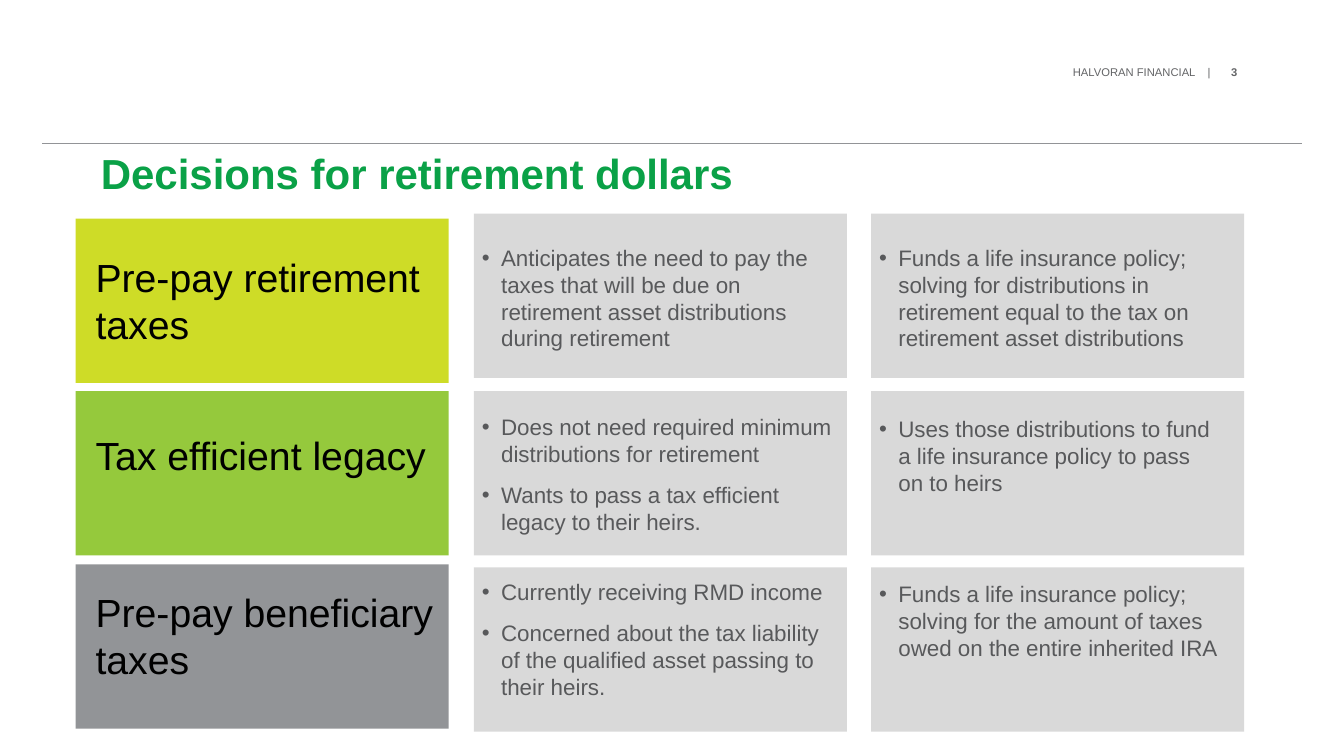
from dataclasses import dataclass

from lxml.etree import SubElement
from pptx import Presentation
from pptx.dml.color import RGBColor
from pptx.enum.shapes import MSO_CONNECTOR, MSO_SHAPE
from pptx.enum.text import MSO_ANCHOR, MSO_AUTO_SIZE, PP_ALIGN
from pptx.oxml.ns import qn
from pptx.slide import Slide
from pptx.text.text import TextFrame, _Paragraph
from pptx.util import Inches, Pt

FONT = "Arial"
TILE_WIDTH, TILE_HEIGHT = 3.7, 1.63
LABEL_LEFT = 0.75
CARD_LEFTS = (4.7, 8.64)
BULLET_INDENT = 0.19


@dataclass
class Card:
    text_top: float
    text_width: float
    bullets: list[str]


@dataclass
class Decision:
    label: str
    color: str
    label_top: float
    label_text_top: float
    card_top: float
    cards: list[Card]


DECISIONS = [
    Decision("Pre-pay retirement taxes", "CEDC27", 2.17, 2.46, 2.12, [
        Card(2.42, 3.52, ["Anticipates the need to pay the taxes that will be due on "
                          "retirement asset distributions during retirement"]),
        Card(2.42, 3.52, ["Funds a life insurance policy; solving for distributions in "
                          "retirement equal to the tax on retirement asset distributions"]),
    ]),
    Decision("Tax efficient legacy", "95C93C", 3.88, 4.23, 3.88, [
        Card(4.1, 3.52, ["Does not need required minimum distributions for retirement",
                         "Wants to pass a tax efficient legacy to their heirs."]),
        Card(4.12, 3.3, ["Uses those distributions to fund a life insurance policy "
                         "to pass on to heirs"]),
    ]),
    Decision("Pre-pay beneficiary taxes", "929497", 5.6, 5.79, 5.63, [
        Card(5.74, 3.52, ["Currently receiving RMD income",
                          "Concerned about the tax liability of the qualified asset "
                          "passing to their heirs."]),
        Card(5.76, 3.52, ["Funds a life insurance policy; solving for the amount of taxes "
                          "owed on the entire inherited IRA"]),
    ]),
]


def rgb(color: str) -> RGBColor:
    return RGBColor.from_string(color)


def add_run(para: _Paragraph, text: str, size: float, color: str, bold: bool = False) -> None:
    span = para.add_run()
    span.text = text
    span.font.name = FONT
    span.font.size = Pt(size)
    span.font.bold = bold
    span.font.color.rgb = rgb(color)


def clear_margins(frame: TextFrame) -> None:
    frame.margin_left = frame.margin_top = frame.margin_right = frame.margin_bottom = 0


def add_text_box(page: Slide, left: float, top: float, width: float, height: float) -> TextFrame:
    box = page.shapes.add_textbox(Inches(left), Inches(top), Inches(width), Inches(height))
    box.text_frame.word_wrap = True
    return box.text_frame


def add_tile(page: Slide, left: float, top: float, color: str) -> None:
    tile = page.shapes.add_shape(MSO_SHAPE.RECTANGLE, Inches(left), Inches(top),
                                 Inches(TILE_WIDTH), Inches(TILE_HEIGHT))
    tile.shadow.inherit = False
    tile.fill.solid()
    tile.fill.fore_color.rgb = rgb(color)
    tile.line.fill.background()


def add_label(page: Slide, decision: Decision) -> None:
    add_tile(page, LABEL_LEFT, decision.label_top, decision.color)
    frame = add_text_box(page, LABEL_LEFT + 0.1, decision.label_text_top, 3.56, 1.34)
    add_run(frame.paragraphs[0], decision.label, 28, "000000")


def add_card(page: Slide, left: float, top: float, card: Card) -> None:
    add_tile(page, left, top, "D9D9D9")
    frame = add_text_box(page, left + 0.08, card.text_top, card.text_width, 1.15)
    clear_margins(frame)
    for index, bullet in enumerate(card.bullets):
        para = frame.add_paragraph() if index else frame.paragraphs[0]
        properties = para._p.get_or_add_pPr()
        properties.set("marL", str(Inches(BULLET_INDENT)))
        properties.set("indent", str(-Inches(BULLET_INDENT)))
        SubElement(properties, qn("a:buFont"), typeface=FONT)
        SubElement(properties, qn("a:buChar"), char="•")
        if index:
            para.space_before = Pt(10)
        add_run(para, bullet, 16, "58595B")


def add_header(page: Slide) -> None:
    frame = add_text_box(page, 10.63, 0.64, 2.31, 0.15)
    clear_margins(frame)
    frame.margin_top = Inches(0.01)
    para = frame.paragraphs[0]
    properties = para._p.get_or_add_pPr()
    properties.set("marL", str(Inches(0.01)))
    tabs = SubElement(properties, qn("a:tabLst"))
    SubElement(tabs, qn("a:tab"), pos=str(Inches(1.57)), algn="l")
    add_run(para, "HALVORAN FINANCIAL    |\t", 8, "636466")
    add_run(para, "3", 8, "636466", bold=True)

    rule = page.shapes.add_connector(MSO_CONNECTOR.STRAIGHT, Inches(0.42), Inches(1.42),
                                     Inches(12.91), Inches(1.42))
    rule.line.color.rgb = rgb("929497")
    rule.line.width = Pt(0.5)
    SubElement(rule._element.spPr, qn("a:effectLst"))


def set_title(page: Slide, text: str) -> None:
    title = page.shapes.title
    title.left, title.top = Inches(1), Inches(1.53)
    title.width, title.height = Inches(11.33), Inches(1.05)
    frame = title.text_frame
    clear_margins(frame)
    frame.word_wrap = True
    frame.auto_size = MSO_AUTO_SIZE.NONE
    frame.vertical_anchor = MSO_ANCHOR.TOP
    para = frame.paragraphs[0]
    para.alignment = PP_ALIGN.LEFT
    para.line_spacing = Pt(31)
    add_run(para, text, 30, "0AA147", bold=True)


def main() -> None:
    deck = Presentation()
    deck.slide_width, deck.slide_height = Inches(13.33), Inches(7.5)
    page = deck.slides.add_slide(deck.slide_layouts[5])
    add_header(page)
    set_title(page, "Decisions for retirement dollars")
    for decision in DECISIONS:
        add_label(page, decision)
        for left, card in zip(CARD_LEFTS, decision.cards):
            add_card(page, left, decision.card_top, card)
    deck.save("out.pptx")


if __name__ == "__main__":
    main()
